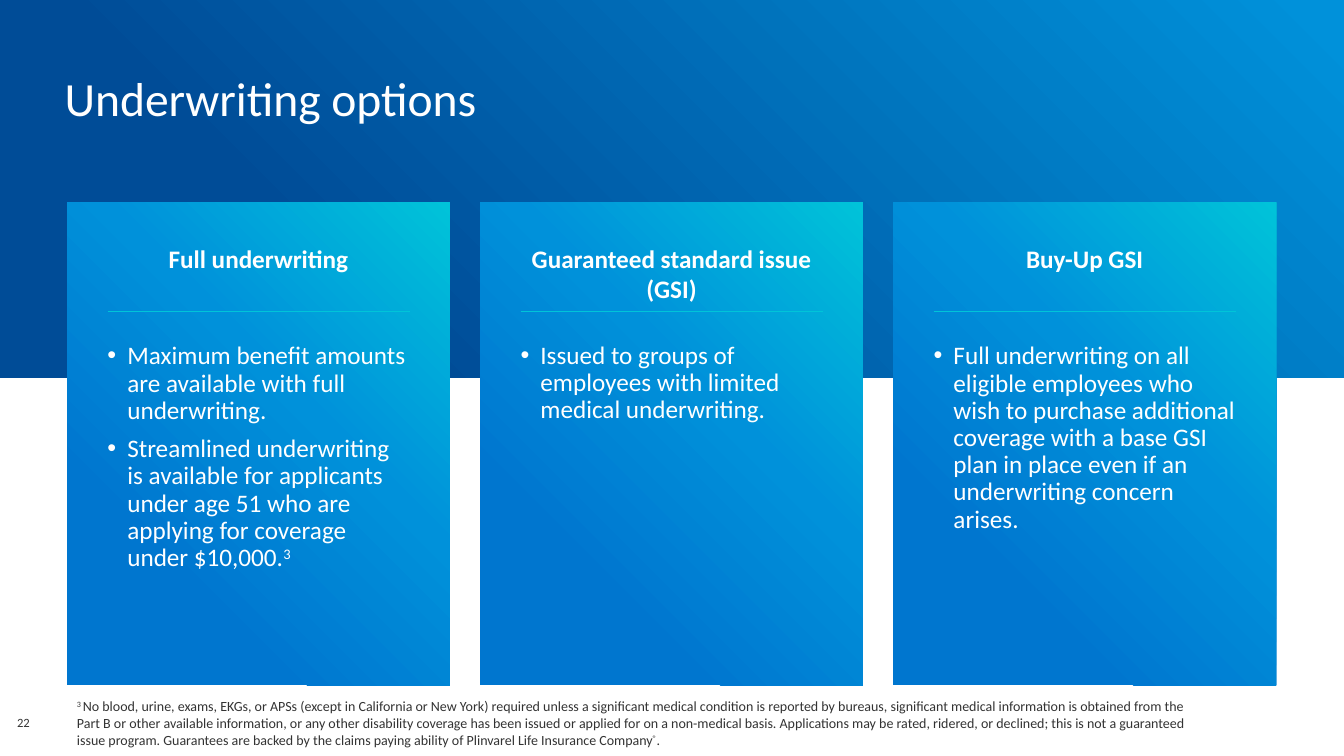
from lxml import etree
from pptx import Presentation
from pptx.dml.color import RGBColor
from pptx.enum.shapes import MSO_CONNECTOR, MSO_SHAPE
from pptx.enum.text import MSO_ANCHOR, MSO_AUTO_SIZE, PP_ALIGN
from pptx.oxml.ns import qn
from pptx.util import Cm, Pt

RECTANGLE = MSO_SHAPE.RECTANGLE
STRAIGHT = MSO_CONNECTOR.STRAIGHT
TOP, BOTTOM = MSO_ANCHOR.TOP, MSO_ANCHOR.BOTTOM
LEFT, CENTER = PP_ALIGN.LEFT, PP_ALIGN.CENTER
NO_FIT = MSO_AUTO_SIZE.NONE

FONT = "Calibri"
COLORS = {
    "navy": "004C97",
    "blue": "0076CF",
    "sky": "0091DA",
    "teal": "00C3D9",
    "rule": "00C4D9",
    "white": "FFFFFF",
    "ink": "333333",
}
BAND_STOPS = [(25, "navy"), (98, "sky")]
CARD_STOPS = [(25, "blue"), (60, "sky"), (100, "teal")]

SLIDE_WIDTH, SLIDE_HEIGHT = 33.87, 19.05
CARD_LEFT, CARD_TOP, CARD_WIDTH, CARD_HEIGHT = 1.69, 5.1, 9.65, 12.17
CARD_PITCH = 10.41
CARD_INSET = 1.02

# Heading, space between heading and bullets in points, bullets as text runs
CARDS = [
    ("Full underwriting", 50, [
        [("Maximum benefit amounts are available with full underwriting.", False)],
        [("Streamlined underwriting is available for applicants under age 51 "
          "who are applying for coverage under $10,000.", False), ("3", True)],
    ]),
    ("Guaranteed standard issue (GSI)", 28, [
        [("Issued to groups of employees with limited medical underwriting.", False)],
    ]),
    ("Buy-Up GSI", 50, [
        [("Full underwriting on all eligible employees who wish to purchase "
          "additional coverage with a base GSI plan in place even if an "
          "underwriting concern arises.", False)],
    ]),
]
FOOTNOTE = [
    ("3 ", True),
    ("No blood, urine, exams, EKGs, or APSs (except in California or New York) "
     "required unless a significant medical condition is reported by bureaus, "
     "significant medical information is obtained from the Part B or other "
     "available information, or any other disability coverage has been issued "
     "or applied for on a non-medical basis. Applications may be rated, ridered, "
     "or declined; this is not a guaranteed issue program. Guarantees are backed "
     "by the claims paying ability of Plinvarel Life Insurance Company", False),
    ("®", True),
    (".", False),
]


def add_span(para, text, size, color, bold=False, raised=False):
    span = para.add_run()
    span.text = text
    span.font.name = FONT
    span.font.size = Pt(size)
    span.font.bold = bold
    span.font.color.rgb = RGBColor.from_string(COLORS[color])
    if raised:
        span.font._element.set("baseline", "30000")


def set_frame(frame, inset, anchor=TOP):
    frame.word_wrap = True
    frame.auto_size = NO_FIT
    frame.vertical_anchor = anchor
    frame.margin_left = frame.margin_right = Cm(inset)
    frame.margin_top = frame.margin_bottom = Cm(inset)


def add_gradient_box(page, left, top, width, height, stops):
    """Add a borderless rectangle shaded from bottom left to top right."""
    box = page.shapes.add_shape(RECTANGLE, Cm(left), Cm(top), Cm(width), Cm(height))
    box.shadow.inherit = False
    box.line.fill.background()
    box.fill.gradient()
    box.fill.gradient_angle = 45
    stop_list = box._element.spPr.find(qn("a:gradFill")).find(qn("a:gsLst"))
    for stop in list(stop_list):
        stop_list.remove(stop)
    for percent, color in stops:
        stop = etree.SubElement(stop_list, qn("a:gs"), pos=str(percent * 1000))
        etree.SubElement(stop, qn("a:srgbClr"), val=COLORS[color])
    return box


def add_bullet(frame, runs, space_before):
    para = frame.add_paragraph()
    properties = para._p.get_or_add_pPr()
    properties.set("marL", str(Cm(0.5)))
    properties.set("indent", str(-Cm(0.5)))
    etree.SubElement(properties, qn("a:buFont"), typeface="Arial")
    etree.SubElement(properties, qn("a:buChar"), char="•")
    para.alignment = LEFT
    para.line_spacing = 0.9
    para.space_before = Pt(space_before)
    para.space_after = Pt(8)
    for text, raised in runs:
        add_span(para, text, 18, "white", raised=raised)


def add_rule(page, left, top, width):
    rule = page.shapes.add_connector(
        STRAIGHT, Cm(left), Cm(top), Cm(left + width), Cm(top))
    rule.line.color.rgb = RGBColor.from_string(COLORS["rule"])
    rule.line.width = Pt(0.75)
    etree.SubElement(rule._element.spPr, qn("a:effectLst"))


def add_card(page, left, top, width, height, card):
    heading, gap, bullets = card
    box = add_gradient_box(page, left, top, width, height, CARD_STOPS)
    frame = box.text_frame
    set_frame(frame, CARD_INSET)
    para = frame.paragraphs[0]
    para.alignment = CENTER
    add_span(para, heading, 18, "white", bold=True)
    for index, runs in enumerate(bullets):
        add_bullet(frame, runs, 0 if index else gap)
    add_rule(page, left + CARD_INSET, top + 2.76, width - 2 * CARD_INSET)


def add_header(page, left, top, width, height):
    band = add_gradient_box(page, left, top, width, height, BAND_STOPS)
    title = page.shapes.title
    band._element.addnext(title._element)
    title.left, title.top = Cm(left + 1.63), Cm(top + 1.73)
    title.width, title.height = Cm(30.48), Cm(1.27)
    set_frame(title.text_frame, 0)
    para = title.text_frame.paragraphs[0]
    para.alignment = LEFT
    add_span(para, "Underwriting options", 34, "white")


def add_footer(page, left, top, width, height):
    number = page.shapes.add_textbox(Cm(left), Cm(top - 0.1), Cm(1.17), Cm(1.04))
    set_frame(number.text_frame, 0, BOTTOM)
    add_span(number.text_frame.paragraphs[0], "22", 9, "ink")

    note = page.shapes.add_textbox(
        Cm(left + 1.26), Cm(top), Cm(width - 1.26), Cm(height))
    frame = note.text_frame
    set_frame(frame, 0.13)
    frame.margin_left = frame.margin_right = Cm(0.25)
    for text, raised in FOOTNOTE:
        add_span(frame.paragraphs[0], text, 10, "ink", raised=raised)


def main():
    deck = Presentation()
    deck.slide_width, deck.slide_height = Cm(SLIDE_WIDTH), Cm(SLIDE_HEIGHT)
    page = deck.slides.add_slide(deck.slide_layouts[5])
    add_header(page, 0, 0, SLIDE_WIDTH, SLIDE_HEIGHT / 2)
    for index, card in enumerate(CARDS):
        add_card(page, CARD_LEFT + index * CARD_PITCH, CARD_TOP,
                 CARD_WIDTH, CARD_HEIGHT, card)
    add_footer(page, 0.43, 17.45, 29.99, 1.55)
    deck.save("out.pptx")


if __name__ == "__main__":
    main()
